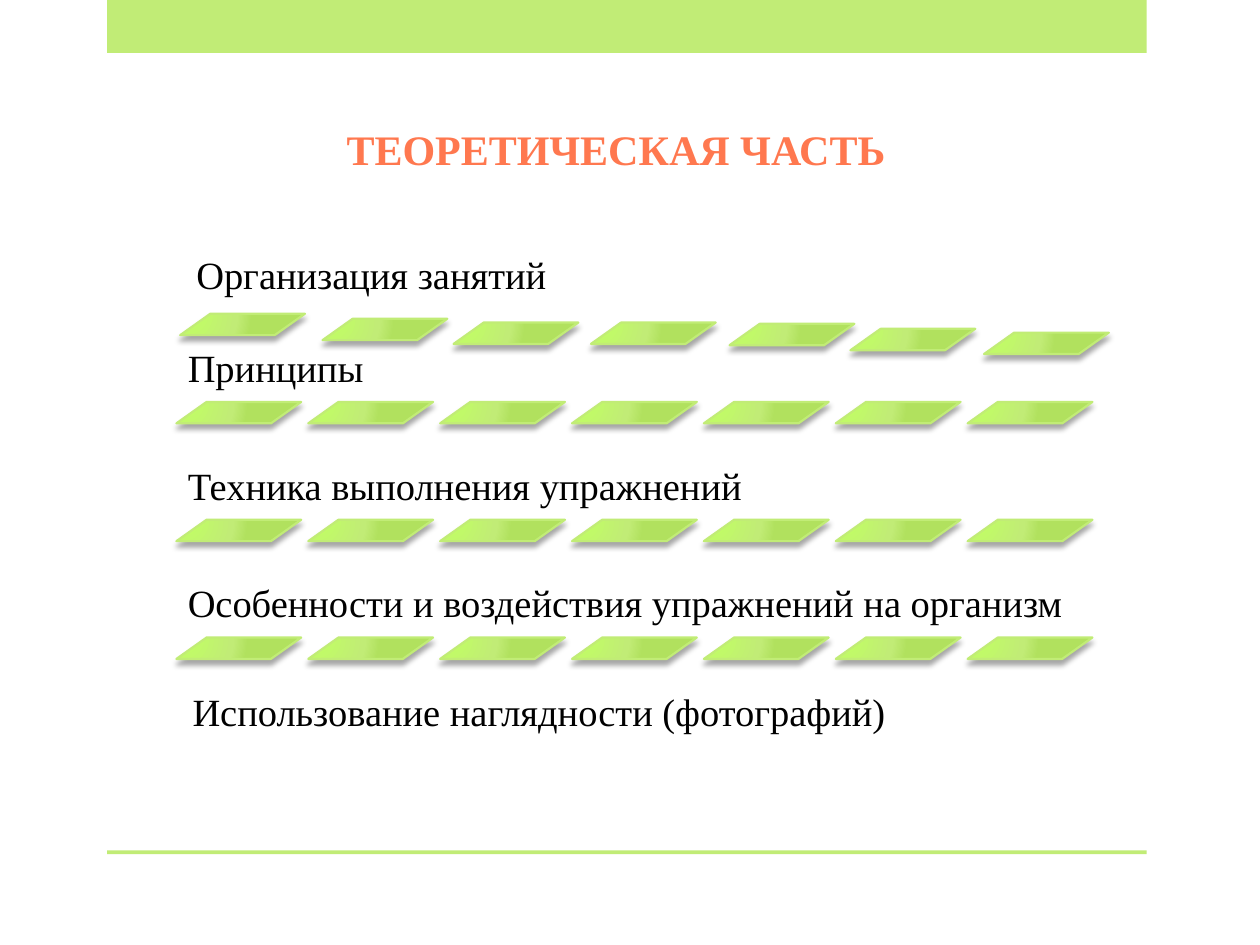
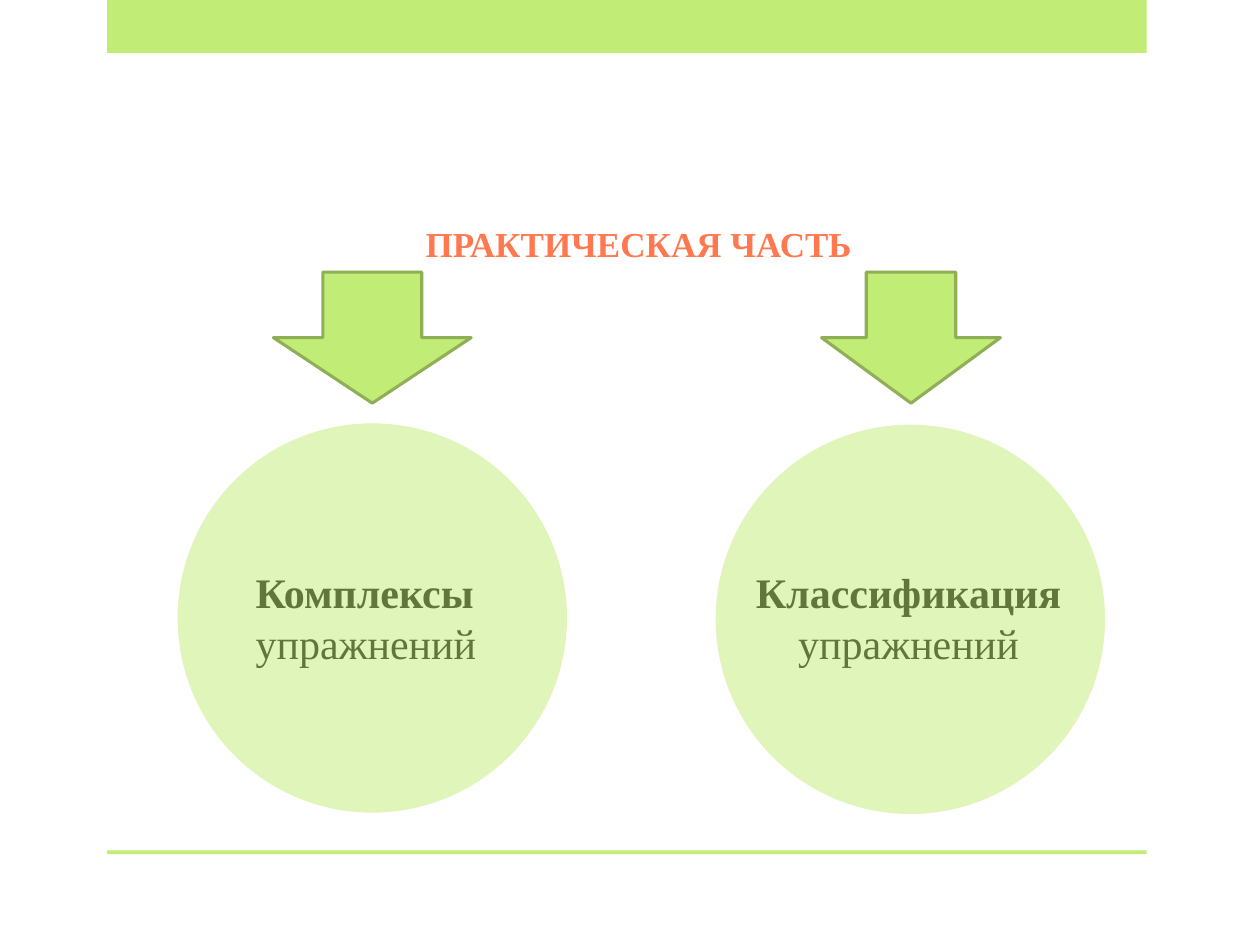
import pptx
import pptx.util
import pptx.dml.color
import pptx.enum.shapes
import pptx.enum.text
import pptx.oxml
import pptx.oxml.ns

Inches = pptx.util.Inches
Pt = pptx.util.Pt
RGBColor = pptx.dml.color.RGBColor
MSO_SHAPE = pptx.enum.shapes.MSO_SHAPE
PP_ALIGN = pptx.enum.text.PP_ALIGN

FONT = "Times New Roman"
LIME = RGBColor(0xC1, 0xEC, 0x76)
OLIVE = RGBColor(0x8F, 0xAF, 0x57)
CORAL = RGBColor(0xFF, 0x78, 0x4F)
BLACK = RGBColor(0, 0, 0)

NS = pptx.oxml.ns.nsdecls("a")
TILE_GRADIENT = f"""<a:gradFill {NS} rotWithShape="1"><a:gsLst>
<a:gs pos="0"><a:srgbClr val="C1FF63"/></a:gs>
<a:gs pos="76000"><a:srgbClr val="C1EC76"/></a:gs>
<a:gs pos="100000"><a:srgbClr val="B1E15E"/></a:gs></a:gsLst>
<a:path path="circle"><a:fillToRect l="15000" t="15000" r="100000" b="100000"/></a:path>
</a:gradFill>"""
TILE_SHADOW = f"""<a:outerShdw {NS} blurRad="38100" dist="38100" dir="5400000" rotWithShape="0">
<a:srgbClr val="000000"><a:alpha val="35000"/></a:srgbClr></a:outerShdw>"""
HALF_ALPHA = f'<a:alpha {NS} val="50000"/>'


def add_filled(slide, kind, left, top, width, height, line=None, line_width=1):
    """Add a lime preset shape, outlined only when a line colour is given."""
    shape = slide.shapes.add_shape(kind, Inches(left), Inches(top), Inches(width), Inches(height))
    shape.shadow.inherit = False
    shape.fill.solid()
    shape.fill.fore_color.rgb = LIME
    if line is None:
        shape.line.fill.background()
    else:
        shape.line.color.rgb = line
        shape.line.width = Pt(line_width)
    return shape


def add_text(slide, lines, left, top, width, height, size, color=BLACK, bold=False, align=PP_ALIGN.LEFT):
    frame = slide.shapes.add_textbox(Inches(left), Inches(top), Inches(width), Inches(height)).text_frame
    frame.word_wrap = True
    frame.text = "\n".join(lines)
    for paragraph in frame.paragraphs:
        paragraph.alignment = align
        paragraph.font.name = FONT
        paragraph.font.size = Pt(size)
        paragraph.font.bold = bold
        paragraph.font.color.rgb = color
    return frame


deck = pptx.Presentation()
deck.slide_width, deck.slide_height = Inches(10), Inches(7.5)
theory, practice = [deck.slides.add_slide(deck.slide_layouts[6]) for _ in range(2)]

titles = [
    (theory, "ТЕОРЕТИЧЕСКАЯ ЧАСТЬ", 2.42, 0.93, 4.94, 0.5, 24),
    (practice, "ПРАКТИЧЕСКАЯ ЧАСТЬ", 3.14, 1.72, 3.86, 0.44, 20),
]
for slide, title, left, top, width, height, size in titles:
    add_filled(slide, MSO_SHAPE.RECTANGLE, 0.85, 0, 8.25, 0.42)
    add_filled(slide, MSO_SHAPE.RECTANGLE, 0.85, 6.75, 8.25, 0.03)
    add_text(slide, [title], left, top, width, height, size, CORAL, True, PP_ALIGN.CENTER)

# Theory: topics underlined by rows of slanted tiles
add_text(theory, ["Организация занятий"], 1.46, 1.94, 7.24, 0.47, 22)
tile_places = [(1.43, 2.49), (2.56, 2.53), (3.6, 2.56), (4.69, 2.56), (5.79, 2.57), (6.75, 2.61), (7.81, 2.64)]

topics = ["Принципы", "Техника выполнения упражнений", "Особенности и воздействия упражнений на организм"]
for row, topic in enumerate(topics):
    tile_top = 3.19 + row * 1.87 / 2
    label = add_text(theory, [topic], 1.4, tile_top - 0.68, 7.42, 0.68, 22)
    label.vertical_anchor = pptx.enum.text.MSO_ANCHOR.BOTTOM
    label.margin_left = label.margin_right = label.margin_top = label.margin_bottom = Inches(0.09)
    label.paragraphs[0].line_spacing = 0.9
    tile_places += [(1.4 + column * 6.28 / 6, tile_top) for column in range(7)]

for left, top in tile_places:
    tile = add_filled(theory, MSO_SHAPE.PARALLELOGRAM, left, top, 0.99, 0.17, LIME, 1.25)
    tile.adjustments[0] = 1.408
    properties = tile.element.spPr
    solid = properties.find(pptx.oxml.ns.qn("a:solidFill"))
    properties.replace(solid, pptx.oxml.parse_xml(TILE_GRADIENT))
    properties.find(pptx.oxml.ns.qn("a:effectLst")).append(pptx.oxml.parse_xml(TILE_SHADOW))

add_text(theory, ["Использование наглядности (фотографий)"], 1.43, 5.41, 7.2, 0.47, 22)

# Practice: two branches, each an arrow above a translucent circle laid over its words
branches = [
    ("Комплексы", PP_ALIGN.LEFT, 1.93, 2.04, 1.41, 3.36, 2.17, 1.57),
    ("Классификация", PP_ALIGN.CENTER, 5.9, 2.65, 5.68, 3.37, 6.52, 1.42),
]
for word, align, text_left, text_width, circle_left, circle_top, arrow_left, arrow_width in branches:
    words = add_text(practice, [word, "упражнений"], text_left, 4.45, text_width, 0.91, 24)
    words.word_wrap = False
    words.paragraphs[0].font.bold = True
    words.paragraphs[1].alignment = align
    circle = add_filled(practice, MSO_SHAPE.OVAL, circle_left, circle_top, 3.09, 3.09)
    circle_color = circle.element.spPr.find(pptx.oxml.ns.qn("a:solidFill"))[0]
    circle_color.append(pptx.oxml.parse_xml(HALF_ALPHA))
    add_filled(practice, MSO_SHAPE.DOWN_ARROW, arrow_left, 2.16, arrow_width, 1.04, OLIVE, 1.75)

deck.save("out.pptx")
